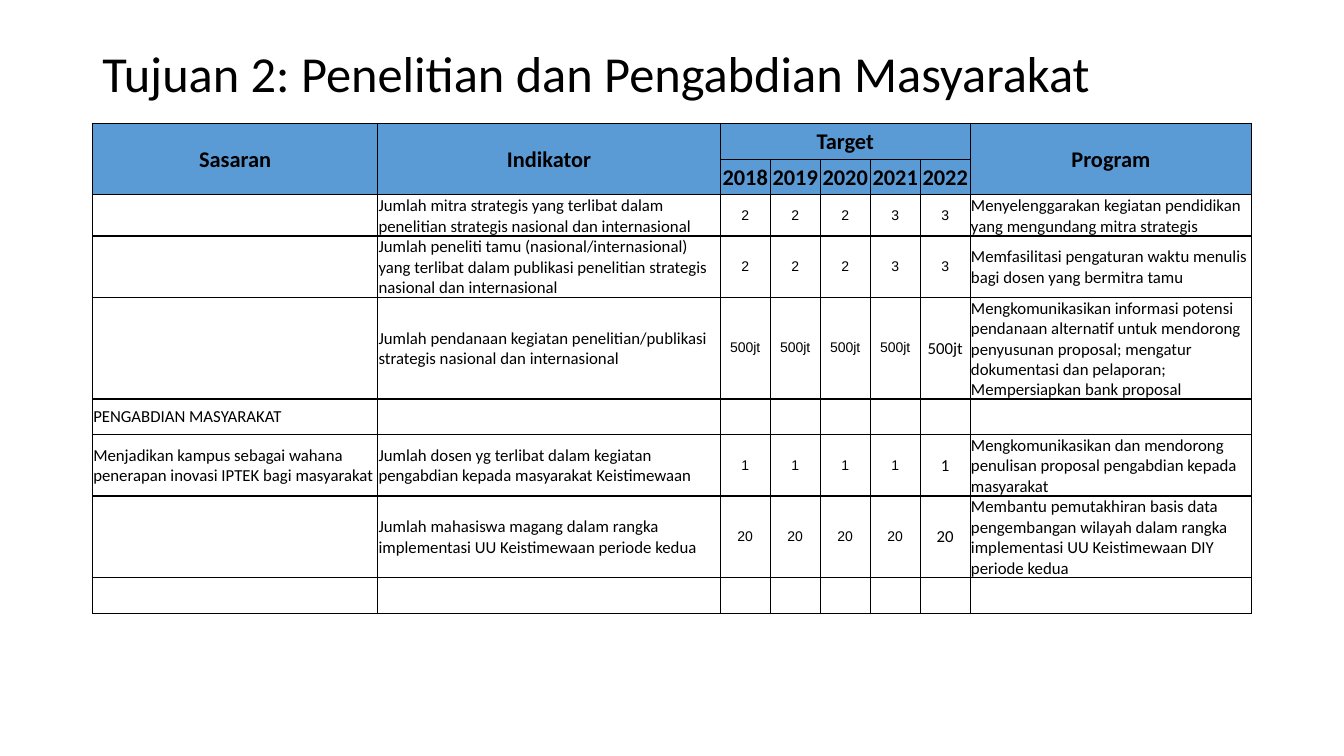
"""Build the slide of research and community service targets."""
from lxml.etree import SubElement
from pptx import Presentation
from pptx.dml.color import RGBColor
from pptx.enum.text import MSO_ANCHOR, PP_ALIGN
from pptx.oxml.ns import qn
from pptx.util import Cm, Pt

BLACK = RGBColor(0x00, 0x00, 0x00)
BLUE = RGBColor(0x5B, 0x9B, 0xD5)

YEARS = ["2018", "2019", "2020", "2021", "2022"]
COLUMN_WIDTHS = [7.19, 8.63] + [1.26] * len(YEARS) + [7.09]
ROW_HEIGHT = 0.9
HEADER_ROWS = 2
HEADER = [
    ["Sasaran", "Indikator", "Target", "", "", "", "", "Program"],
    ["", "", *YEARS, ""],
]
MERGES = [((0, 0), (1, 0)), ((0, 1), (1, 1)), ((0, 2), (0, 6)), ((0, 7), (1, 7))]
BODY = [
    ["", "Jumlah mitra strategis yang terlibat dalam penelitian strategis nasional dan internasional",
     "2", "2", "2", "3", "3",
     "Menyelenggarakan kegiatan pendidikan yang mengundang mitra strategis"],
    ["", "Jumlah peneliti tamu (nasional/internasional) yang terlibat dalam publikasi penelitian "
     "strategis nasional dan internasional",
     "2", "2", "2", "3", "3",
     "Memfasilitasi pengaturan waktu menulis bagi dosen yang bermitra tamu"],
    ["", "Jumlah pendanaan kegiatan penelitian/publikasi strategis nasional dan internasional",
     *["500jt"] * 5,
     "Mengkomunikasikan informasi potensi pendanaan alternatif untuk mendorong penyusunan proposal; "
     "mengatur dokumentasi dan pelaporan; Mempersiapkan bank proposal"],
    ["PENGABDIAN MASYARAKAT", *[""] * 7],
    ["Menjadikan kampus sebagai wahana penerapan inovasi IPTEK bagi masyarakat",
     "Jumlah dosen yg terlibat dalam kegiatan pengabdian kepada masyarakat Keistimewaan",
     *["1"] * 5,
     "Mengkomunikasikan dan mendorong penulisan proposal pengabdian kepada masyarakat"],
    ["", "Jumlah mahasiswa magang dalam rangka implementasi UU Keistimewaan periode kedua",
     *["20"] * 5,
     "Membantu pemutakhiran basis data pengembangan wilayah dalam rangka implementasi "
     "UU Keistimewaan DIY periode kedua"],
    [""] * 8,
]


def write(frame, text, size=12, font="Calibri", bold=False, align=PP_ALIGN.LEFT, spacing=None):
    """Put one formatted paragraph into a text frame."""
    para = frame.paragraphs[0]
    para.alignment = align
    para.line_spacing = spacing
    if text:
        span = para.add_run()
        span.text = text
        span.font.size = Pt(size)
        span.font.name = font
        span.font.bold = bold
        span.font.color.rgb = BLACK


class TargetSlide:
    """Hold the style and the current slide."""

    def __init__(self, page):
        """Keep the page and its border width."""
        self.page = page
        self.border = Pt(1)

    def title(self, text, left, top, width, height):
        """Add the heading."""
        box = self.page.shapes.add_textbox(Cm(left), Cm(top), Cm(width), Cm(height))
        box.text_frame.word_wrap = True
        box.text_frame.vertical_anchor = MSO_ANCHOR.MIDDLE
        write(box.text_frame, text, size=36, spacing=0.9)

    def outline(self, cell):
        """Draw a black line on each side of a cell."""
        properties = cell._tc.get_or_add_tcPr()
        for side in ("a:lnL", "a:lnR", "a:lnT", "a:lnB"):
            line = SubElement(properties, qn(side), w=str(self.border))
            fill = SubElement(line, qn("a:solidFill"))
            SubElement(fill, qn("a:srgbClr"), val=str(BLACK))

    def cell(self, cell, text, filled=False, padding=0.02, **style):
        """Format and fill one table cell."""
        self.outline(cell)
        if filled:
            cell.fill.solid()
            cell.fill.fore_color.rgb = BLUE
        else:
            cell.fill.background()
        cell.vertical_anchor = MSO_ANCHOR.MIDDLE
        cell.margin_left = cell.margin_right = Cm(0.02)
        cell.margin_top = Cm(padding)
        cell.margin_bottom = Cm(padding if padding > 0.02 else 0)
        write(cell.text_frame, text, **style)

    def table(self, left, top):
        """Add the table of indicators and yearly targets."""
        rows = HEADER + BODY
        frame = self.page.shapes.add_table(
            len(rows), len(COLUMN_WIDTHS), Cm(left), Cm(top),
            Cm(sum(COLUMN_WIDTHS)), Cm(ROW_HEIGHT * len(rows)))
        table = frame.table
        table.first_row = table.horz_banding = False
        for column, width in zip(table.columns, COLUMN_WIDTHS):
            column.width = Cm(width)
        for row_index, values in enumerate(rows):
            table.rows[row_index].height = Cm(ROW_HEIGHT)
            for column_index, text in enumerate(values):
                self.cell(table.cell(row_index, column_index), text,
                          **self.cell_style(row_index, column_index, text))
        for first, last in MERGES:
            table.cell(*first).merge(table.cell(*last))

    def cell_style(self, row, column, text):
        """Choose the format that belongs to a table position."""
        if row < HEADER_ROWS:
            return dict(filled=True, size=16, bold=True, align=PP_ALIGN.CENTER)
        if not text or not 2 <= column <= 6:
            return {}
        if column < 6:
            return dict(size=10, font="Arial", padding=0.08, align=PP_ALIGN.CENTER)
        if row < HEADER_ROWS + 2:
            return dict(size=10, font="Arial", align=PP_ALIGN.CENTER)
        return dict(align=PP_ALIGN.CENTER)


def main():
    """Create and save the deck."""
    deck = Presentation()
    deck.slide_width, deck.slide_height = Cm(33.87), Cm(19.05)
    slide = TargetSlide(deck.slides.add_slide(deck.slide_layouts[6]))
    slide.title("Tujuan 2: Penelitian dan Pengabdian Masyarakat", 2.33, 1.01, 29.21, 1.8)
    slide.table(2.33, 3.11)
    deck.save("out.pptx")


if __name__ == "__main__":
    main()
